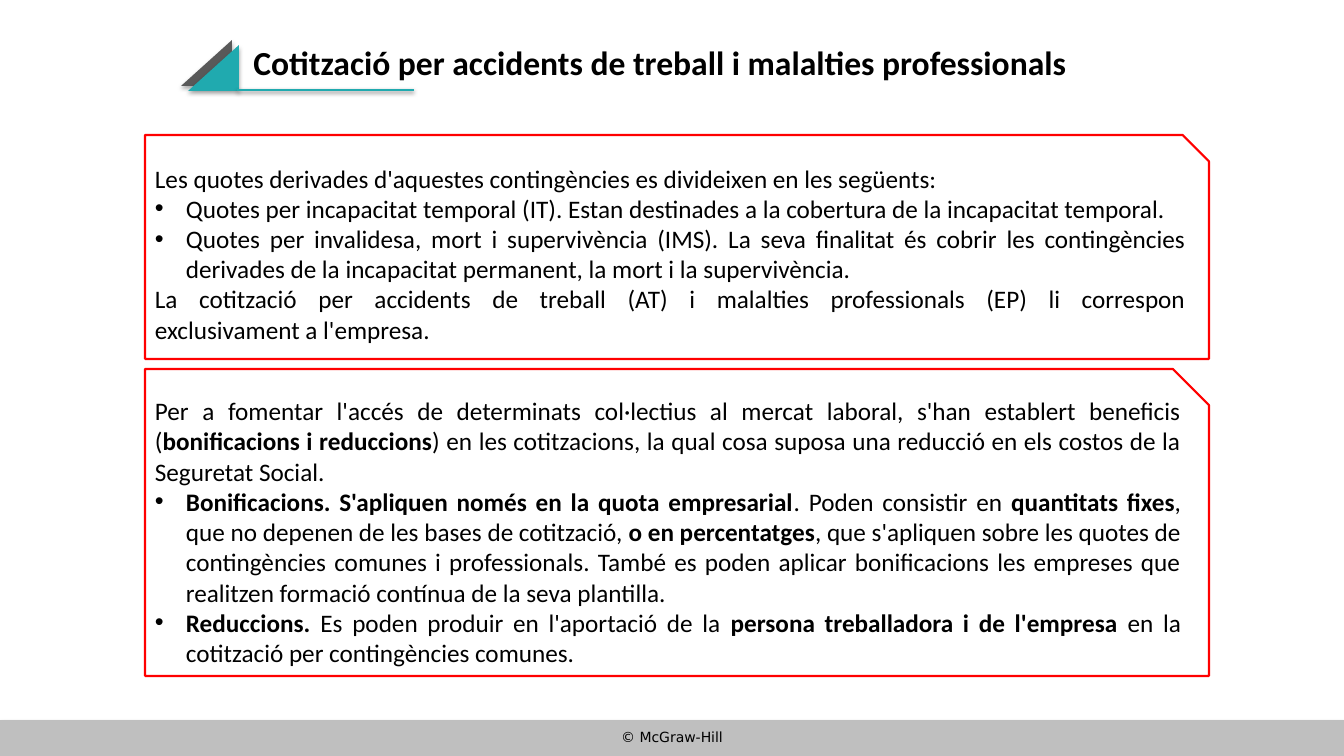
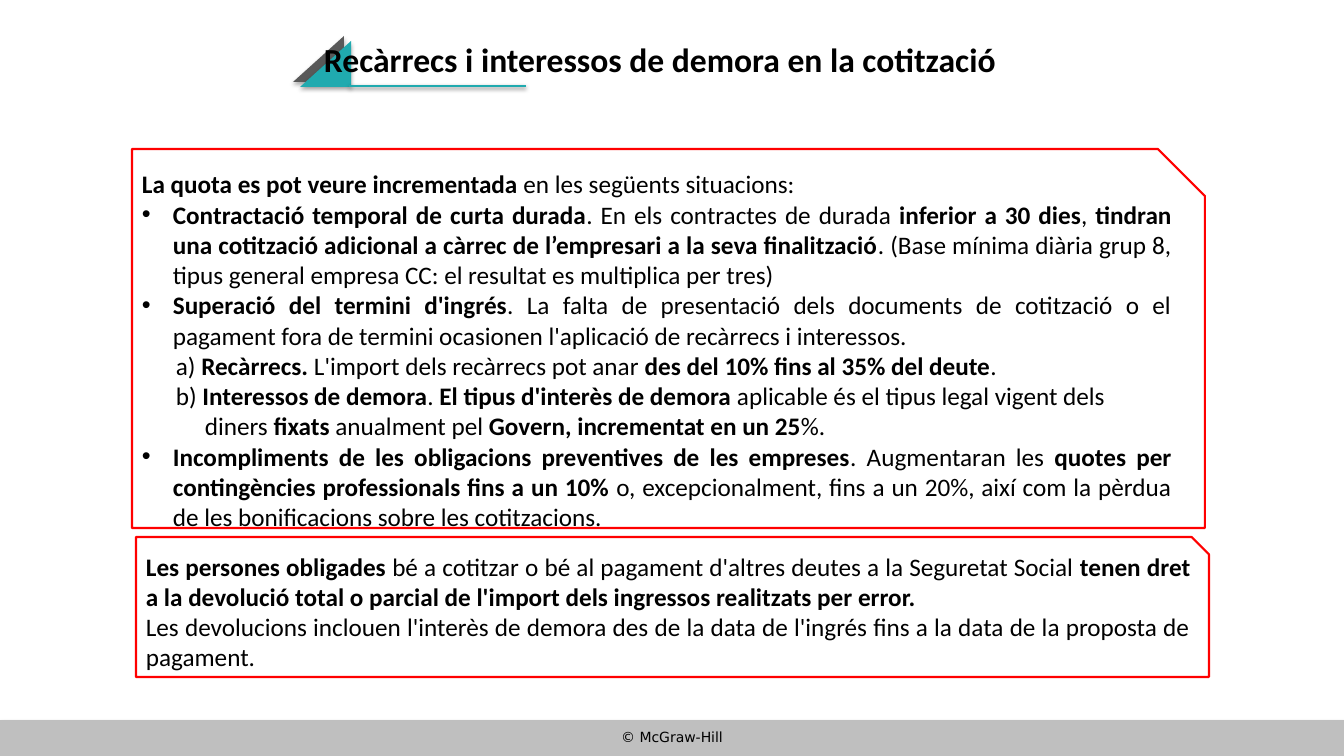
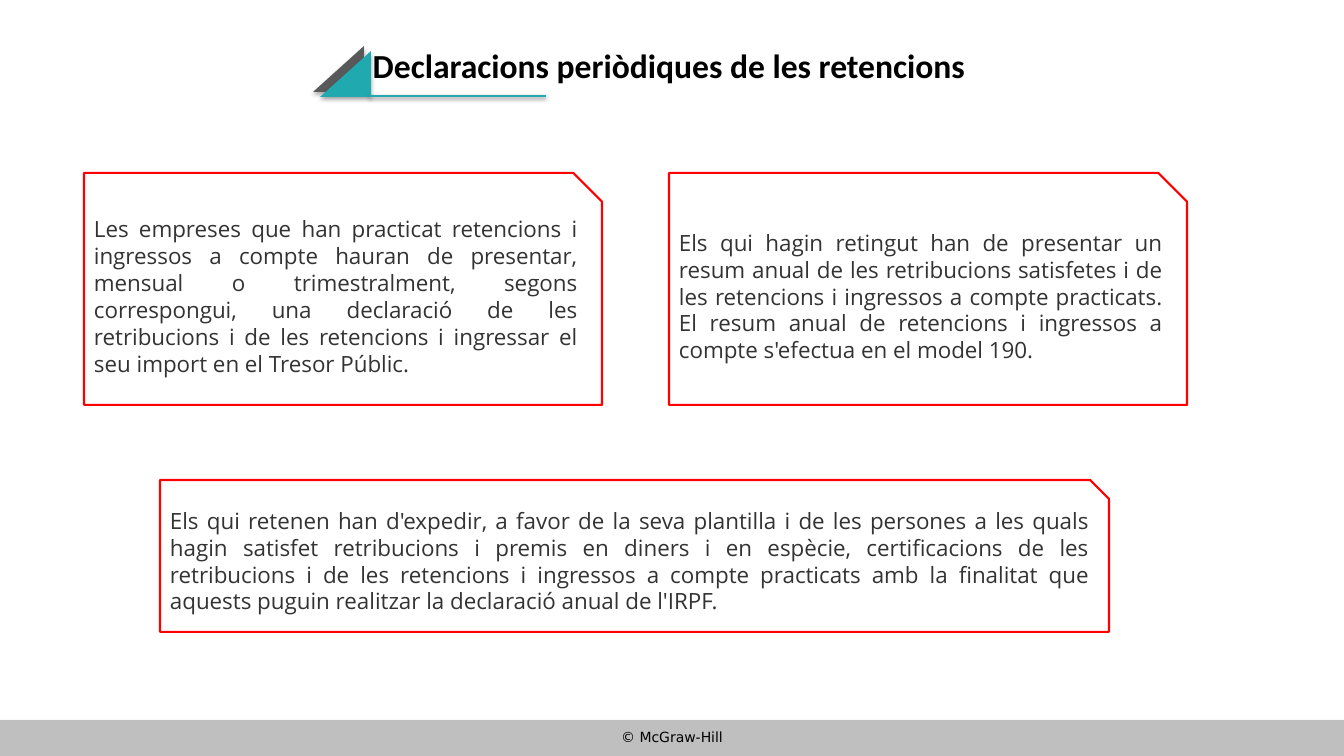
import pptx
import pptx.dml.color
import pptx.enum.shapes
import pptx.enum.text
import pptx.oxml
import pptx.oxml.ns
import pptx.util

EMU_PER_PX = 914400 / 100.8
SLIDE_SIZE = (1344, 756)
BLACK, DARK, RED = "000000", "333333", "FF0000"
TEAL, GREY, BAND = "20AAAF", "595959", "BFBFBF"
CALIBRI_18 = ("Calibri", 18, BLACK)
OPEN_SANS_16 = ("Open Sans", 16, DARK)
TITLE_STYLE = ("Calibri", 24, BLACK)
FOOTER_STYLE = ("DejaVu Sans", 10, BLACK)
INDENTS = {"plain": (0, 0), "bullet": (31, -31), "item": (63, -29)}

CONTINGENCY_FEES = [
    ("plain", "Les quotes derivades d'aquestes contingències es divideixen en les següents:"),
    ("bullet", "Quotes per incapacitat temporal (IT). Estan destinades a la cobertura de la "
               "incapacitat temporal."),
    ("bullet", "Quotes per invalidesa, mort i supervivència (IMS). La seva finalitat és cobrir les "
               "contingències derivades de la incapacitat permanent, la mort i la supervivència."),
    ("plain", "La cotització per accidents de treball (AT) i malalties professionals (EP) li correspon\v"
              "exclusivament a l'empresa."),
]
BENEFITS = [
    ("plain", "Per a fomentar l'accés de determinats col·lectius al mercat laboral, s'han establert "
              "beneficis (**bonificacions i reduccions**) en les cotitzacions, la qual cosa suposa una "
              "reducció en els costos de la Seguretat Social."),
    ("bullet", "**Bonificacions. S'apliquen només en la quota empresarial**. Poden consistir en "
               "**quantitats fixes**, que no depenen de les bases de cotització, **o en percentatges**, "
               "que s'apliquen sobre les quotes de contingències comunes i professionals. També es "
               "poden aplicar bonificacions les empreses que realitzen formació contínua de la seva "
               "plantilla."),
    ("bullet", "**Reduccions.** Es poden produir en l'aportació de la **persona treballadora i de "
               "l'empresa **en la cotització per contingències comunes."),
]
SURCHARGES = [
    ("plain", "**La quota es pot veure incrementada **en les següents situacions:"),
    ("bullet", "**Contractació temporal de curta durada**. En els contractes de durada **inferior a 30 "
               "dies**, **tindran una cotització adicional a càrrec de l’empresari a la seva "
               "finalització**. (Base mínima diària grup 8, tipus general empresa CC: el resultat es "
               "multiplica per tres)"),
    ("bullet", "**Superació del termini d'ingrés**. La falta de presentació dels documents de "
               "cotització o el pagament fora de termini ocasionen l'aplicació de recàrrecs i interessos."),
    ("item", "a) **Recàrrecs. **L'import dels recàrrecs pot anar **des del 10% fins al 35% del deute**."),
    ("item", "b) **Interessos de demora**. **El tipus d'interès de demora **aplicable és el tipus legal "
             "vigent dels\vdiners **fixats **anualment pel **Govern, incrementat en un 25**%."),
    ("bullet", "**Incompliments de les obligacions preventives de les empreses**. Augmentaran les "
               "**quotes per contingències professionals fins a un 10% **o, excepcionalment, fins a un "
               "20%, així com la pèrdua de les bonificacions sobre les cotitzacions."),
]
REFUNDS = [
    ("plain", "**Les persones obligades **bé a cotitzar o bé al pagament d'altres deutes a la Seguretat "
              "Social **tenen dret a la devolució total o parcial de l'import dels ingressos realitzats "
              "per error.**"),
    ("plain", "Les devolucions inclouen l'interès de demora des de la data de l'ingrés fins a la data de "
              "la proposta de pagament."),
]
PERIODIC_RETURN = [
    ("plain", "Les empreses que han practicat retencions i ingressos a compte hauran de presentar, "
              "mensual o trimestralment, segons correspongui, una declaració de les retribucions i de "
              "les retencions i ingressar el seu import en el Tresor Públic."),
]
ANNUAL_SUMMARY = [
    ("plain", "Els qui hagin retingut han de presentar un resum anual de les retribucions satisfetes i "
              "de les retencions i ingressos a compte practicats. El resum anual de retencions i "
              "ingressos a compte s'efectua en el model 190."),
]
CERTIFICATES = [
    ("plain", "Els qui retenen han d'expedir, a favor de la seva plantilla i de les persones a les quals "
              "hagin satisfet retribucions i premis en diners i en espècie, certificacions de les "
              "retribucions i de les retencions i ingressos a compte practicats amb la finalitat que "
              "aquests puguin realitzar la declaració anual de l'IRPF."),
]


def px(length):
    """Turn a length in px into EMU."""
    return pptx.util.Emu(round(length * EMU_PER_PX))


def place(*lengths):
    """Turn several px lengths into EMU."""
    return [px(length) for length in lengths]


def colour(code):
    """Turn a hex string into a colour."""
    return pptx.dml.color.RGBColor.from_string(code)


def style_span(span, style, bold=False):
    """Give a run its font, size, colour and weight."""
    name, size, code = style
    span.font.name = name
    span.font.size = pptx.util.Pt(size)
    span.font.color.rgb = colour(code)
    span.font.bold = bold


def add_shadow(shape, alpha=35, distance=1.8):
    """Add a soft black shadow below a shape or line."""
    shape.element.spPr.append(pptx.oxml.parse_xml(
        f'<a:effectLst {pptx.oxml.ns.nsdecls("a")}>'
        f'<a:outerShdw blurRad="{pptx.util.Pt(3.1)}" dist="{pptx.util.Pt(distance)}" dir="5400000" '
        f'algn="tl" rotWithShape="0"><a:srgbClr val="{BLACK}"><a:alpha val="{alpha * 1000}"/>'
        '</a:srgbClr></a:outerShdw></a:effectLst>'))


def add_solid(shapes, preset, area, code):
    """Add a filled, shadowed shape without outline."""
    solid = shapes.add_shape(preset, *place(*area))
    solid.fill.solid()
    solid.fill.fore_color.rgb = colour(code)
    solid.line.fill.background()
    add_shadow(solid)
    return solid


def add_emblem(slide, left, top):
    """Add the two triangles and the underline beside a title."""
    shapes = slide.shapes.add_group_shape().shapes
    for across, down, code in ((0, 0, GREY), (7, 5, TEAL)):
        triangle = add_solid(shapes, pptx.enum.shapes.MSO_SHAPE.ISOSCELES_TRIANGLE,
                             (left + across, top + down, 51, 46), code)
        triangle.adjustments[0] = 1
    underline = shapes.add_connector(pptx.enum.shapes.MSO_CONNECTOR.STRAIGHT,
                                     *place(left + 56, top + 50, left + 233, top + 50))
    underline.line.color.rgb = colour(TEAL)
    underline.line.width = pptx.util.Pt(2)
    add_shadow(underline, 38, 1.6)


def set_title(slide, text, left, top):
    """Place and format the title above the emblem."""
    title = slide.shapes.title
    title.left, title.top, title.width, title.height = place(left, top, 928, 81)
    frame = title.text_frame
    frame.text = text
    frame.auto_size = pptx.enum.text.MSO_AUTO_SIZE.NONE
    frame.vertical_anchor = pptx.enum.text.MSO_ANCHOR.TOP
    para = frame.paragraphs[0]
    para.alignment = pptx.enum.text.PP_ALIGN.CENTER
    para.line_spacing = 0.8
    style_span(para.runs[0], TITLE_STYLE, True)
    title.element.getparent().append(title.element)


def add_bullet(para):
    """Give a paragraph a black round bullet."""
    for tag in (f'buClr {{}}><a:srgbClr val="{BLACK}"/></a:buClr', 'buFont {} typeface="Arial"/',
                'buChar {} char="•"/'):
        para._p.get_or_add_pPr().append(
            pptx.oxml.parse_xml(f'<a:{tag.format(pptx.oxml.ns.nsdecls("a"))}>'))


def fill_para(para, kind, text, style):
    """Write text in a paragraph, with ** around bold parts."""
    margin, indent = place(*INDENTS[kind])
    properties = para._p.get_or_add_pPr()
    properties.set("marL", str(margin))
    properties.set("indent", str(indent))
    aligns = pptx.enum.text.PP_ALIGN
    para.alignment = aligns.LEFT if kind == "item" else aligns.JUSTIFY
    if kind == "bullet":
        add_bullet(para)
    for line_number, line in enumerate(text.split("\v")):
        if line_number:
            para.add_line_break()
        for number, piece in enumerate(line.split("**")):
            if piece:
                span = para.add_run()
                span.text = piece
                style_span(span, style, number % 2 == 1)


def add_snipped_box(slide, area, content, style, snip=0.124):
    """Add a red outlined box with one snipped corner and its text."""
    box = slide.shapes.add_shape(pptx.enum.shapes.MSO_SHAPE.SNIP_1_RECTANGLE, *place(*area))
    box.adjustments[0] = snip
    box.shadow.inherit = False
    box.fill.background()
    box.line.color.rgb = colour(RED)
    box.line.width = pptx.util.Pt(1.5)
    frame = box.text_frame
    frame.word_wrap = True
    frame.vertical_anchor = pptx.enum.text.MSO_ANCHOR.MIDDLE
    for number, (kind, text) in enumerate(content):
        para = frame.add_paragraph() if number else frame.paragraphs[0]
        fill_para(para, kind, text, style)


def move_footer_to_layout(slide):
    """Draw the band and copyright line and hand them to the layout."""
    band = add_solid(slide.shapes, pptx.enum.shapes.MSO_SHAPE.RECTANGLE, (0, 720, 1344, 36), BAND)
    footer = slide.shapes.add_textbox(*place(0, 724, 1344, 32))
    footer.text_frame.word_wrap = True
    footer.text_frame.text = "© McGraw-Hill"
    para = footer.text_frame.paragraphs[0]
    para.alignment = pptx.enum.text.PP_ALIGN.CENTER
    style_span(para.runs[0], FOOTER_STYLE)
    for shape in (band, footer):
        slide.slide_layout.shapes.element.append(shape.element)


def add_topic(deck, title, title_at, emblem_at):
    """Add a slide with its emblem and title."""
    slide = deck.slides.add_slide(deck.slide_layouts[5])
    add_emblem(slide, *emblem_at)
    set_title(slide, title, *title_at)
    return slide


def main():
    """Build and save the deck."""
    deck = pptx.Presentation()
    deck.slide_width, deck.slide_height = place(*SLIDE_SIZE)

    page = add_topic(deck, "Cotització per accidents de treball i malalties professionals",
                     (196, 45), (181, 40))
    move_footer_to_layout(page)
    add_snipped_box(page, (145, 135, 1064, 224), CONTINGENCY_FEES, CALIBRI_18, 0.118)
    add_snipped_box(page, (145, 369, 1064, 307), BENEFITS, CALIBRI_18, 0.118)

    page = add_topic(deck, "Recàrrecs i interessos de demora en la cotització", (196, 42), (293, 36))
    add_snipped_box(page, (132, 149, 1073, 379), SURCHARGES, CALIBRI_18)
    add_snipped_box(page, (136, 537, 1073, 140), REFUNDS, CALIBRI_18)

    page = add_topic(deck, "Declaracions periòdiques de les retencions", (205, 48), (313, 46))
    for left, content in ((84, PERIODIC_RETURN), (669, ANNUAL_SUMMARY)):
        add_snipped_box(page, (left, 173, 518, 232), content, OPEN_SANS_16)
    add_snipped_box(page, (160, 480, 949, 152), CERTIFICATES, OPEN_SANS_16)

    deck.save("out.pptx")


if __name__ == "__main__":
    main()
